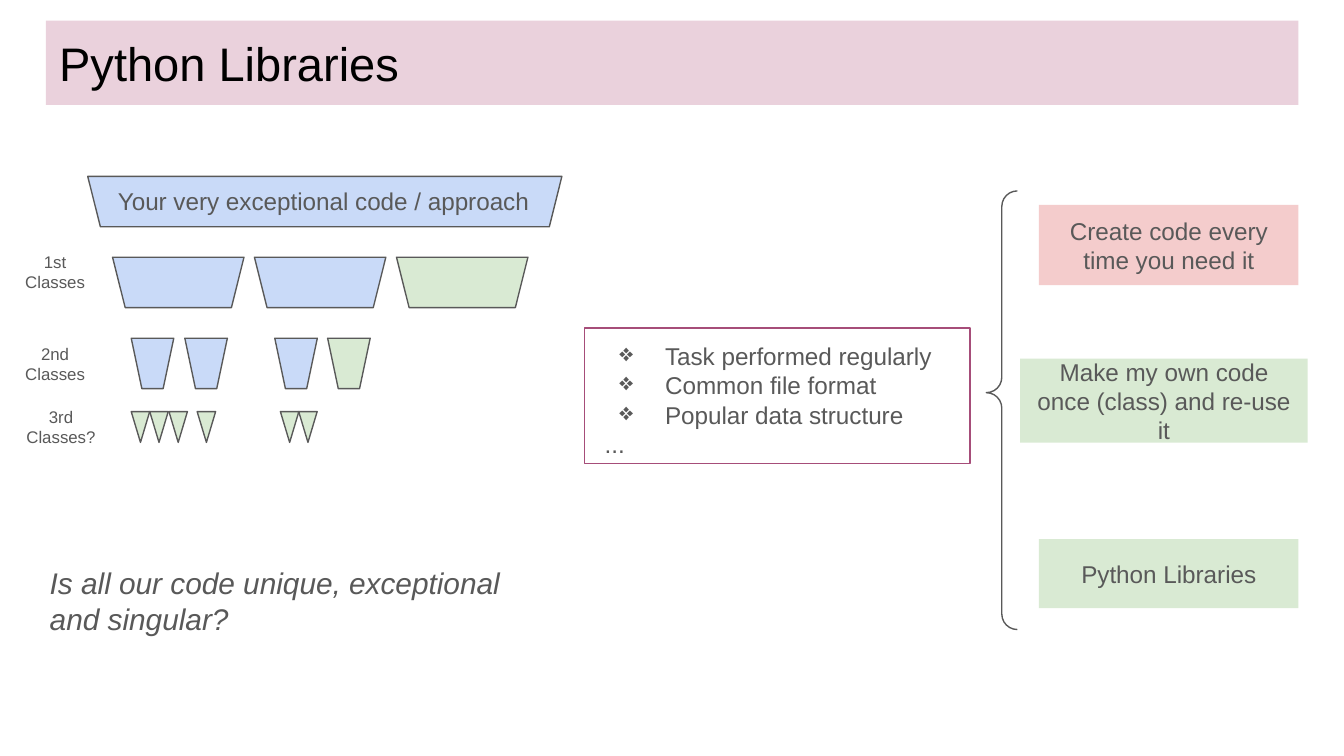
"""Build the Python Libraries slide."""
from lxml import etree
from pptx import Presentation
from pptx import util as u
from pptx.dml import color
from pptx.enum import shapes, text
from pptx.oxml import ns

GREY, BLUE, GREEN, RED = "595959", "C9DAF8", "D9EAD3", "F4CCCC"
PINK, PURPLE, BLACK = "EAD1DC", "A64D79", "000000"
KIND = shapes.MSO_SHAPE


def rgb(value):
    """Return a colour from a hex string."""
    return color.RGBColor.from_string(value)


def add_shape(slide, kind, box, fill=None, line=None, rotation=0):
    """Add a preset shape with optional fill and thin outline."""
    shape = slide.shapes.add_shape(kind, *[u.Pt(length) for length in box])
    shape.shadow.inherit = False
    shape.rotation = rotation
    if fill:
        shape.fill.solid()
        shape.fill.fore_color.rgb = rgb(fill)
    else:
        shape.fill.background()
    if line:
        shape.line.color.rgb = rgb(line)
        shape.line.width = u.Pt(0.75)
    else:
        shape.line.fill.background()
    return shape


def write(shape, words, size=13, colour=GREY, centred=True, italic=None):
    """Put formatted text into a shape or text box."""
    frame = shape.text_frame
    frame.word_wrap = True
    frame.margin_left = frame.margin_right = u.Pt(7.2)
    frame.margin_top = frame.margin_bottom = u.Pt(7.2)
    anchors = text.MSO_ANCHOR
    frame.vertical_anchor = anchors.MIDDLE if centred else anchors.TOP
    frame.text = words
    for paragraph in frame.paragraphs:
        paragraph.alignment = text.PP_ALIGN.CENTER if centred else text.PP_ALIGN.LEFT
        for run in paragraph.runs:
            run.font.name = "Arial"
            run.font.size = u.Pt(size)
            run.font.italic = italic
            run.font.color.rgb = rgb(colour)


def add_text(slide, box, words, **style):
    """Add a text box with formatted text."""
    write(slide.shapes.add_textbox(*[u.Pt(length) for length in box]), words, **style)


def indent(paragraph, left, first=0):
    """Set the left margin and first-line indent of a paragraph."""
    properties = paragraph._p.get_or_add_pPr()
    properties.set("marL", str(u.Pt(left)))
    properties.set("indent", str(u.Pt(first)))
    return properties


def add_bullet(paragraph):
    """Give a paragraph a grey diamond bullet."""
    properties = indent(paragraph, 36, -24.5)
    bullet_colour = etree.SubElement(properties, ns.qn("a:buClr"))
    etree.SubElement(bullet_colour, ns.qn("a:srgbClr")).set("val", GREY)
    etree.SubElement(properties, ns.qn("a:buChar")).set("char", "❖")


def add_row(slide, kind, top, width, height, items):
    """Add a row of upside-down shapes from (left, fill) pairs."""
    for left, fill in items:
        add_shape(slide, kind, (left, top, width, height), fill, GREY, 180)


def add_class_tree(slide):
    """Add the levels of classes with their labels."""
    add_row(slide, KIND.TRAPEZOID, 94.5, 254, 27, [(47, BLUE)])
    add_row(slide, KIND.TRAPEZOID, 137.8, 70.4, 27,
            [(60.3, BLUE), (136.3, BLUE), (212.4, GREEN)])
    add_row(slide, KIND.TRAPEZOID, 181.2, 22.8, 27,
            [(70.3, BLUE), (99, BLUE), (147.2, BLUE), (175.5, GREEN)])
    add_row(slide, KIND.ISOSCELES_TRIANGLE, 220.5, 9.9, 16.5,
            [(left, GREEN) for left in (70.3, 80.2, 90.5, 105.6, 150.2, 160)])
    add_text(slide, (54, 98, 238.3, 19.5), "Your very exceptional code / approach")
    for words, top, width in (("1st Classes", 136, 49), ("2nd Classes", 185.2, 49),
                              ("3rd Classes?", 219.1, 55.4)):
        add_text(slide, (5, top, width, 19.5), words, size=9)


def add_reasons(slide):
    """Add the outlined list of reasons to re-use code."""
    box = add_shape(slide, KIND.RECTANGLE, (313.2, 175.8, 206.5, 72.5), line=PURPLE)
    reasons = ("Task performed regularly", "Common file format", "Popular data structure")
    write(box, "\n".join(reasons + ("...",)), centred=False)
    *bulleted, last = box.text_frame.paragraphs
    for paragraph in bulleted:
        add_bullet(paragraph)
    indent(last, 3.6)


def add_options(slide):
    """Add the three options and the brace that gathers them."""
    for words, box, fill in (
        ("Create code every time you need it", (556.6, 109.8, 139, 43), RED),
        ("Make my own code once (class) and re-use it", (546.5, 192.2, 154, 45), GREEN),
        ("Python Libraries", (556.6, 288.8, 139, 37), GREEN),
    ):
        write(add_shape(slide, KIND.RECTANGLE, box, fill), words)
    brace = add_shape(slide, KIND.LEFT_BRACE, (528.4, 102.3, 16.6, 235), line=GREY)
    brace.adjustments[0] = 0.5
    brace.adjustments[1] = 0.46


def main():
    """Build and save the presentation."""
    presentation = Presentation()
    presentation.slide_width, presentation.slide_height = u.Pt(720), u.Pt(405)
    slide = presentation.slides.add_slide(presentation.slide_layouts[6])
    title = add_shape(slide, KIND.RECTANGLE, (24.6, 11, 671, 45.2), PINK)
    write(title, "Python Libraries", size=25.2, colour=BLACK, centred=False)
    add_class_tree(slide)
    add_text(slide, (19.6, 295.2, 263, 31), "Is all our code unique, exceptional and singular?",
             size=16, centred=False, italic=True)
    add_reasons(slide)
    add_options(slide)
    presentation.save("out.pptx")


if __name__ == "__main__":
    main()
